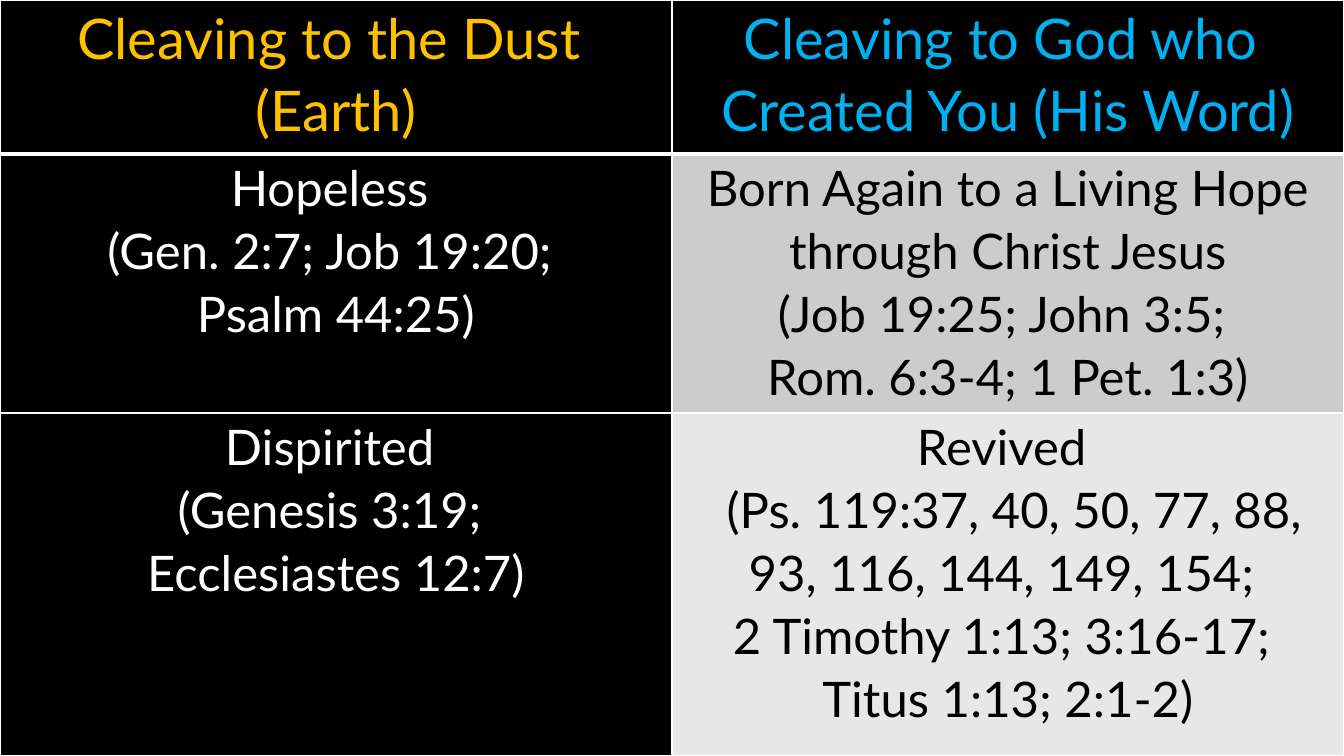
from dataclasses import dataclass

from lxml.etree import SubElement as Sub
from pptx import Presentation
from pptx.dml.color import RGBColor as Rgb
from pptx.enum.text import PP_ALIGN as Align
from pptx.oxml.ns import qn
from pptx.util import Pt


@dataclass(frozen=True)
class Theme:
    font: str = "Lato"
    black: str = "000000"
    white: str = "FFFFFF"
    gold: str = "FFC000"
    blue: str = "00B0F0"
    gray: str = "CCCCCC"
    pale: str = "E7E7E7"
    head: int = 40
    body: int = 35
    thin: int = 1
    thick: int = 3


THEME = Theme()
WIDE, HIGH = 960, 540
ROWS = (110, 185, 245)

DUST = (
    ["Cleaving to the Dust ", "(Earth)"],
    ["Hopeless ", "(Gen. 2:7; Job 19:20; ", "Psalm 44:25)"],
    ["Dispirited ", "(Genesis 3:19; ", "Ecclesiastes 12:7)"],
)
WORD = (
    ["Cleaving to God who ", "Created You (His Word)"],
    ["Born Again to a Living Hope through Christ Jesus",
     "(Job 19:25; John 3:5; ", "Rom. 6:3-4; 1 Pet. 1:3)"],
    ["Revived ", " (Ps. 119:37, 40, 50, 77, 88, 93, 116, 144, 149, 154; ",
     "2 Timothy 1:13; 3:16-17; ", "Titus 1:13; 2:1-2)"],
)
DUST_LOOK = (
    (THEME.black, THEME.gold),
    (THEME.black, THEME.white),
    (THEME.black, THEME.white),
)
WORD_LOOK = (
    (THEME.black, THEME.blue),
    (THEME.gray, THEME.black),
    (THEME.pale, THEME.black),
)


def write(frame, lines, *, size, color, align=Align.CENTER, space=1.07):
    for i, line in enumerate(lines):
        para = frame.paragraphs[0] if i == 0 else frame.add_paragraph()
        para.alignment = align
        para.line_spacing = space
        run = para.add_run()
        run.text = line
        run.font.name = THEME.font
        run.font.size = Pt(size)
        run.font.color.rgb = Rgb.from_string(color)


def edge(cell, **widths):
    props = cell._tc.get_or_add_tcPr()
    for i, side in enumerate("LRTB"):
        width = widths.get(side, THEME.thin)
        line = Sub(props, qn(f"a:ln{side}"), w=str(Pt(width)))
        fill = Sub(line, qn("a:solidFill"))
        Sub(fill, qn("a:srgbClr"), val=THEME.white)
        props.insert(i, line)


def paint(cell, color):
    cell.fill.solid()
    cell.fill.fore_color.rgb = Rgb.from_string(color)


def fill_side(table, col, texts, looks):
    for row, (lines, (back, ink)) in enumerate(zip(texts, looks)):
        cell = table.cell(row, col)
        cell.margin_left = cell.margin_right = Pt(5)
        cell.margin_top = cell.margin_bottom = Pt(0)
        paint(cell, back)
        edge(cell, T=THEME.thick if row == 1 else THEME.thin,
             B=THEME.thick if row == 0 else THEME.thin)
        write(cell.text_frame, lines, color=ink,
              size=THEME.body if row else THEME.head)


def add_grid(slide):
    table = slide.shapes.add_table(
        len(ROWS), 2, Pt(0), Pt(0), Pt(WIDE), Pt(HIGH)).table
    table.horz_banding = False
    for col in table.columns:
        col.width = Pt(WIDE / 2)
    for row, tall in zip(table.rows, ROWS):
        row.height = Pt(tall)
    return table


def main():
    deck = Presentation()
    deck.slide_width, deck.slide_height = Pt(WIDE), Pt(HIGH)
    slide = deck.slides.add_slide(deck.slide_layouts[6])
    paint_back = slide.background.fill
    paint_back.solid()
    paint_back.fore_color.rgb = Rgb.from_string(THEME.black)
    table = add_grid(slide)
    fill_side(table, 0, DUST, DUST_LOOK)
    fill_side(table, 1, WORD, WORD_LOOK)
    deck.save("out.pptx")


if __name__ == "__main__":
    main()
